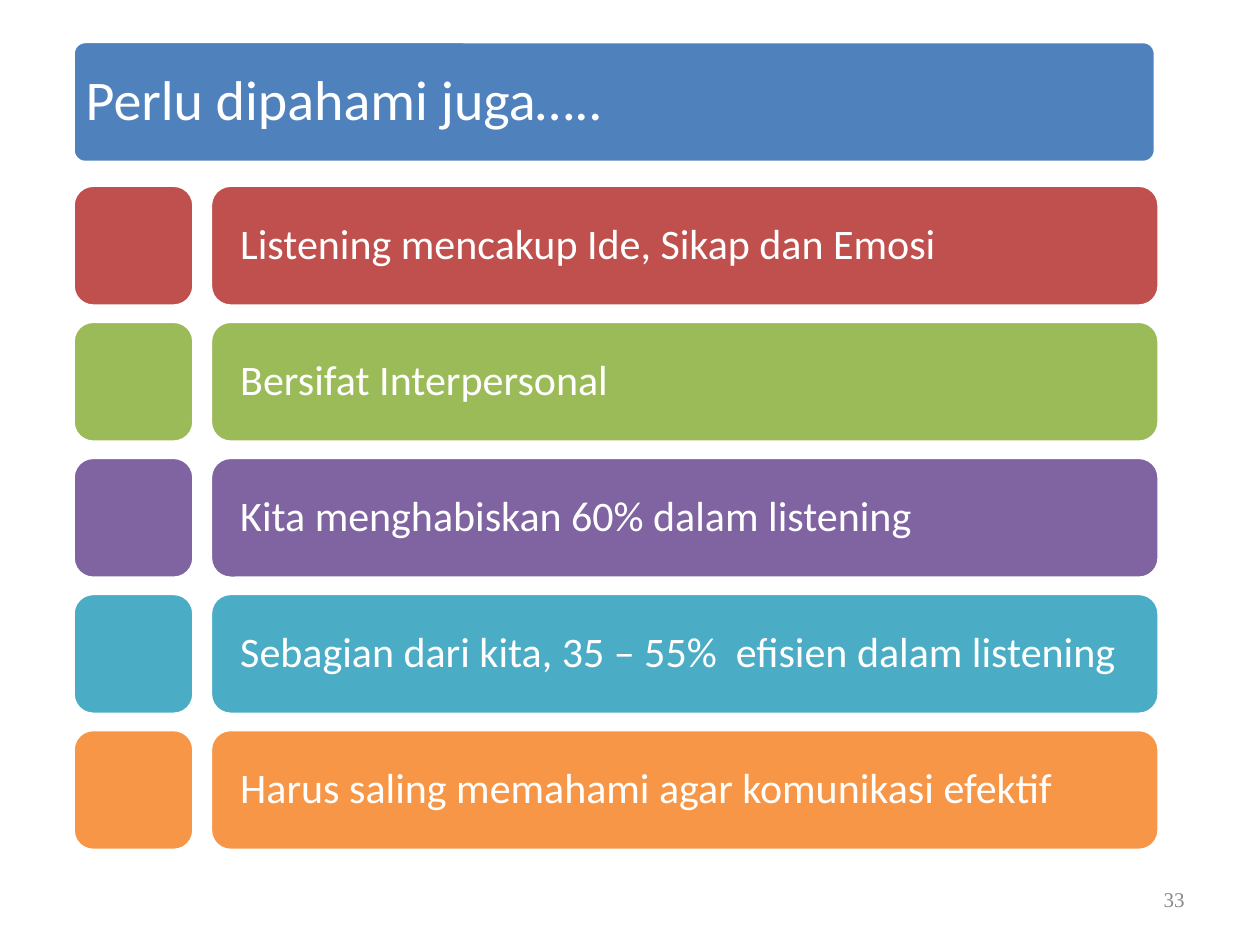
import pptx
import pptx.util
import pptx.dml.color
import pptx.enum.shapes
import pptx.enum.text

RGBColor = pptx.dml.color.RGBColor
Inches, Pt = pptx.util.Inches, pptx.util.Pt
PP_ALIGN = pptx.enum.text.PP_ALIGN

WHITE = RGBColor(0xFF, 0xFF, 0xFF)
GREY = RGBColor(0x89, 0x89, 0x89)
BLUE = RGBColor(0x4F, 0x81, 0xBD)
RED = RGBColor(0xC0, 0x50, 0x4D)
GREEN = RGBColor(0x9B, 0xBB, 0x59)
PURPLE = RGBColor(0x80, 0x64, 0xA2)
TEAL = RGBColor(0x4B, 0xAC, 0xC6)
ORANGE = RGBColor(0xF7, 0x96, 0x46)

# Grid in inches: square tiles, then wide bars, in equally spaced rows
LEFT, TOP = 0.58, 1.47
TILE, PITCH = 0.96, 1.08
BAR_LEFT, BAR_WIDTH = 1.67, 7.53

POINTS = [
    ("Listening mencakup Ide, Sikap dan Emosi", RED),
    ("Bersifat Interpersonal", GREEN),
    ("Kita menghabiskan 60% dalam listening", PURPLE),
    ("Sebagian dari kita, 35 – 55%  efisien dalam listening", TEAL),
    ("Harus saling memahami agar komunikasi efektif", ORANGE),
]


class Deck:
    """Holds the style and the current slide."""

    def __init__(self, s):
        self.s = s

    def label(self, sp, text, size, color=WHITE, font="Calibri",
              align=PP_ALIGN.LEFT, inset=(0.1, 0.05)):
        tf = sp.text_frame
        tf.word_wrap = True
        tf.auto_size = pptx.enum.text.MSO_AUTO_SIZE.NONE
        tf.vertical_anchor = pptx.enum.text.MSO_ANCHOR.MIDDLE
        tf.margin_left = tf.margin_right = Inches(inset[0])
        tf.margin_top = tf.margin_bottom = Inches(inset[1])
        p = tf.paragraphs[0]
        p.text = text
        p.alignment = align
        p.line_spacing = 0.9
        p.font.size, p.font.name = Pt(size), font
        p.font.color.rgb = color

    def box(self, x, y, w, color, corner=0.167):
        sp = self.s.shapes.add_shape(
            pptx.enum.shapes.MSO_SHAPE.ROUNDED_RECTANGLE,
            Inches(x), Inches(y), Inches(w), Inches(TILE))
        sp.adjustments[0] = corner
        sp.shadow.inherit = False
        sp.fill.solid()
        sp.fill.fore_color.rgb = color
        sp.line.color.rgb = WHITE
        sp.line.width = Pt(2)
        return sp

    def title(self, text):
        self.box(LEFT, 0.33, 8.59, BLUE, corner=0.1)
        sp = self.s.shapes.title
        sp.left, sp.top = Inches(0.61), Inches(0.36)
        sp.width, sp.height = Inches(8.54), Inches(0.91)
        self.label(sp, text, 32, inset=(0.07, 0.04))
        # Bring the title in front of its banner
        self.s.shapes.element.append(sp.element)

    def row(self, i, text, color):
        y = TOP + i * PITCH
        self.box(LEFT, y, TILE, color)
        bar = self.box(BAR_LEFT, y, BAR_WIDTH, color)
        self.label(bar, text, 24, inset=(0.19, 0.19))

    def page_number(self, text):
        sp = self.s.shapes.add_textbox(
            Inches(7.17), Inches(6.95), Inches(2.33), Inches(0.4))
        self.label(sp, text, 12, GREY, "Times New Roman", PP_ALIGN.RIGHT)


def main():
    prs = pptx.Presentation()
    prs.slide_width, prs.slide_height = Inches(10), Inches(7.5)
    deck = Deck(prs.slides.add_slide(prs.slide_layouts[5]))

    # Banner title
    deck.title("Perlu dipahami juga…..")

    # Coloured rows
    for i, (text, color) in enumerate(POINTS):
        deck.row(i, text, color)

    # Footer
    deck.page_number("33")
    prs.save("out.pptx")


if __name__ == "__main__":
    main()
